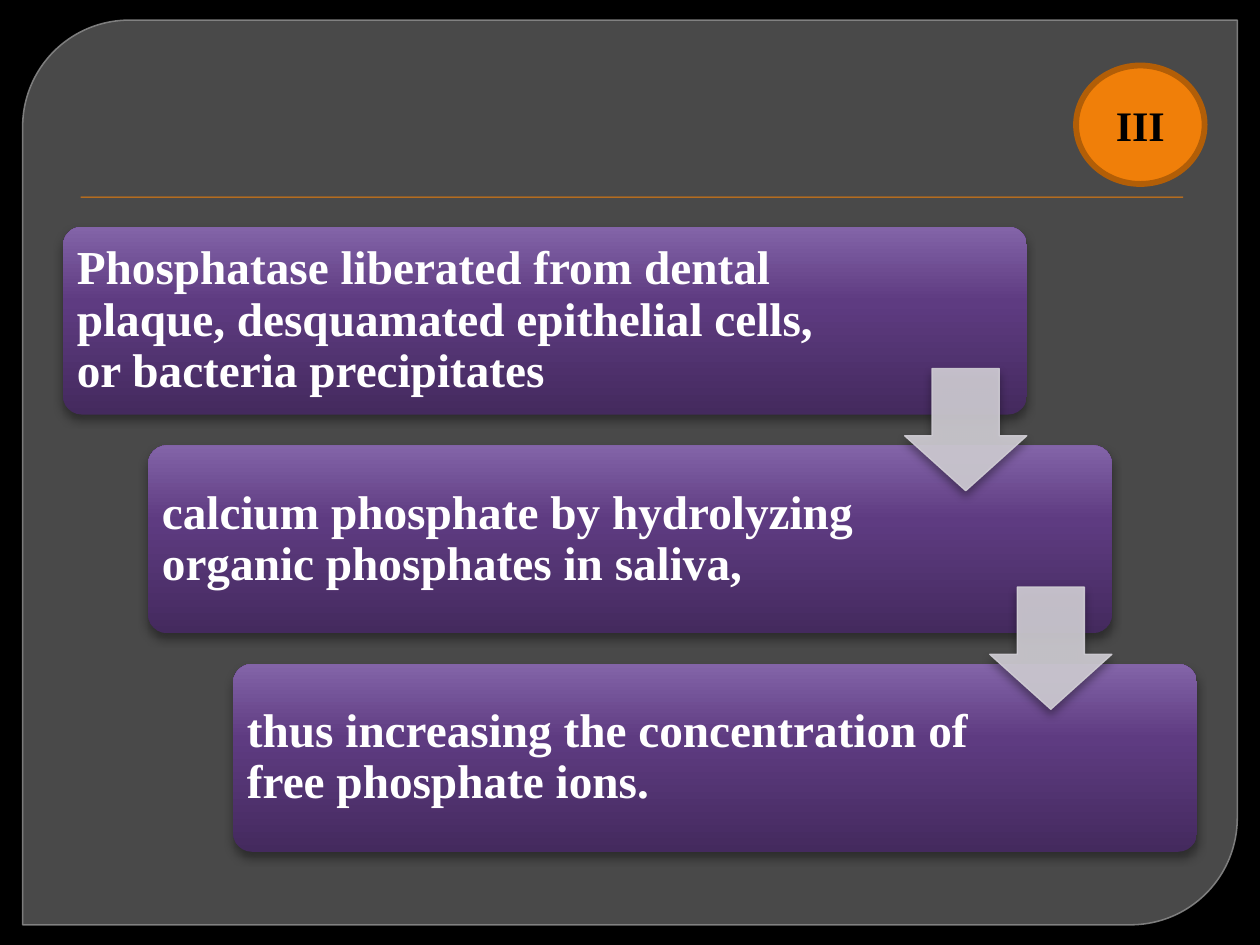
from lxml.etree import SubElement
from copy import deepcopy
from pptx import Presentation
from pptx.dml.color import RGBColor
from pptx.enum.shapes import MSO_SHAPE as Shape
from pptx.enum.text import MSO_ANCHOR as Anchor, PP_ALIGN as Align
from pptx.oxml.ns import qn
from pptx.util import Inches, Pt

presentation = Presentation()
presentation.slide_width, presentation.slide_height = Inches(10), Inches(7.5)
slide = presentation.slides.add_slide(presentation.slide_layouts[6])
column = presentation.slide_width // 100
row = presentation.slide_height // 75


def colour(color_format, value):
    color_format.rgb = RGBColor.from_string(value)


def draw(kind, left, top, width, height, fill, line=None, weight=0,
         opacity=(), shadow=None, adjustments=()):
    """Add a shape in grid units; opacity is (fill, line), shadow is (blur, distance, percent)."""
    shape = slide.shapes.add_shape(kind, round(left * column), round(top * row),
                                   round(width * column), round(height * row))
    for index, value in enumerate(adjustments):
        shape.adjustments[index] = value
    shape.fill.solid()
    colour(shape.fill.fore_color, fill)
    if line:
        colour(shape.line.color, line)
        shape.line.width = Pt(weight)
    else:
        shape.line.fill.background()
    properties = shape._element.spPr
    for color, percent in zip(properties.iter(qn("a:srgbClr")), opacity):
        SubElement(color, qn("a:alpha"), val=str(percent * 1000))
    shape.shadow.inherit = False
    if shadow:
        blur, distance, percent = shadow
        outer = SubElement(properties.find(qn("a:effectLst")), qn("a:outerShdw"),
                           blurRad=str(Pt(blur)), dist=str(Pt(distance)),
                           dir="5400000", rotWithShape="0")
        color = SubElement(outer, qn("a:srgbClr"), val="000000")
        SubElement(color, qn("a:alpha"), val=str(percent * 1000))
    return shape


# Background, rounded panel and title rule
slide.background.fill.solid()
colour(slide.background.fill.fore_color, "000000")
draw(Shape.ROUND_2_DIAG_RECTANGLE, 1.8, 1.6, 96.4, 71.8, "717171", "898989", 0.87,
     opacity=(65, 88), adjustments=(0.118, 0))
draw(Shape.RECTANGLE, 6.4, 15.6, 87.5, 0.1, "F07F09", shadow=(1, 1, 75))

# Cascade of steps
steps = [
    ("Phosphatase liberated from dental plaque, desquamated epithelial cells, "
     "or bacteria precipitates", 61.3),
    ("calcium phosphate by hydrolyzing organic phosphates in saliva,", 60.1),
    ("thus increasing the concentration of free phosphate ions.", 60.1),
]
gradient = [(0, "442A5E"), (0.6, "5E3B81"), (1, "8364A8")]
step_width, step_height, arrow_size = 76.5, 14.9, 9.7
soft_shadow = (5.2, 3, 40)
corners = [(5 + 6.75 * index, 18 + 17.35 * index) for index in range(len(steps))]
labels = []

for (text, text_width), (left, top) in zip(steps, corners):
    box = draw(Shape.ROUNDED_RECTANGLE, left, top, step_width, step_height, "5E3B81",
               shadow=soft_shadow, adjustments=(0.1,))
    box.fill.gradient()
    box.fill.gradient_angle = 90
    first_stop = box._element.spPr.find(".//" + qn("a:gs"))
    first_stop.addnext(deepcopy(first_stop))
    for stop, (position, value) in zip(box.fill.gradient_stops, gradient):
        stop.position = position
        colour(stop.color, value)

    text_box = slide.shapes.add_textbox(round(left * column), round(top * row),
                                        round(text_width * column), round(step_height * row))
    frame = text_box.text_frame
    frame.margin_left = frame.margin_right = Inches(0.11)
    frame.margin_top = frame.margin_bottom = Inches(0.11)
    frame.paragraphs[0].line_spacing = 0.9
    labels.append((frame, text, 27, "FFFFFF", Align.LEFT))

for left, top in corners[:-1]:
    draw(Shape.DOWN_ARROW, left + step_width - arrow_size, top + 11.25, arrow_size, arrow_size,
         "D2CFD6", "D2CFD6", 0.75, opacity=(90, 90), shadow=soft_shadow,
         adjustments=(0.55, 0.45))

# Numbered badge
badge = draw(Shape.OVAL, 85.4, 5.2, 10.2, 9.4, "F07F09", "B25E07", 3.35)
labels.append((badge.text_frame, "III", 24, "000000", Align.CENTER))

for frame, text, size, value, alignment in labels:
    frame.word_wrap = True
    frame.vertical_anchor = Anchor.MIDDLE
    paragraph = frame.paragraphs[0]
    paragraph.alignment = alignment
    run = paragraph.add_run()
    run.text = text
    run.font.name = "Times New Roman"
    run.font.size = Pt(size)
    run.font.bold = True
    colour(run.font.color, value)

presentation.save("out.pptx")
